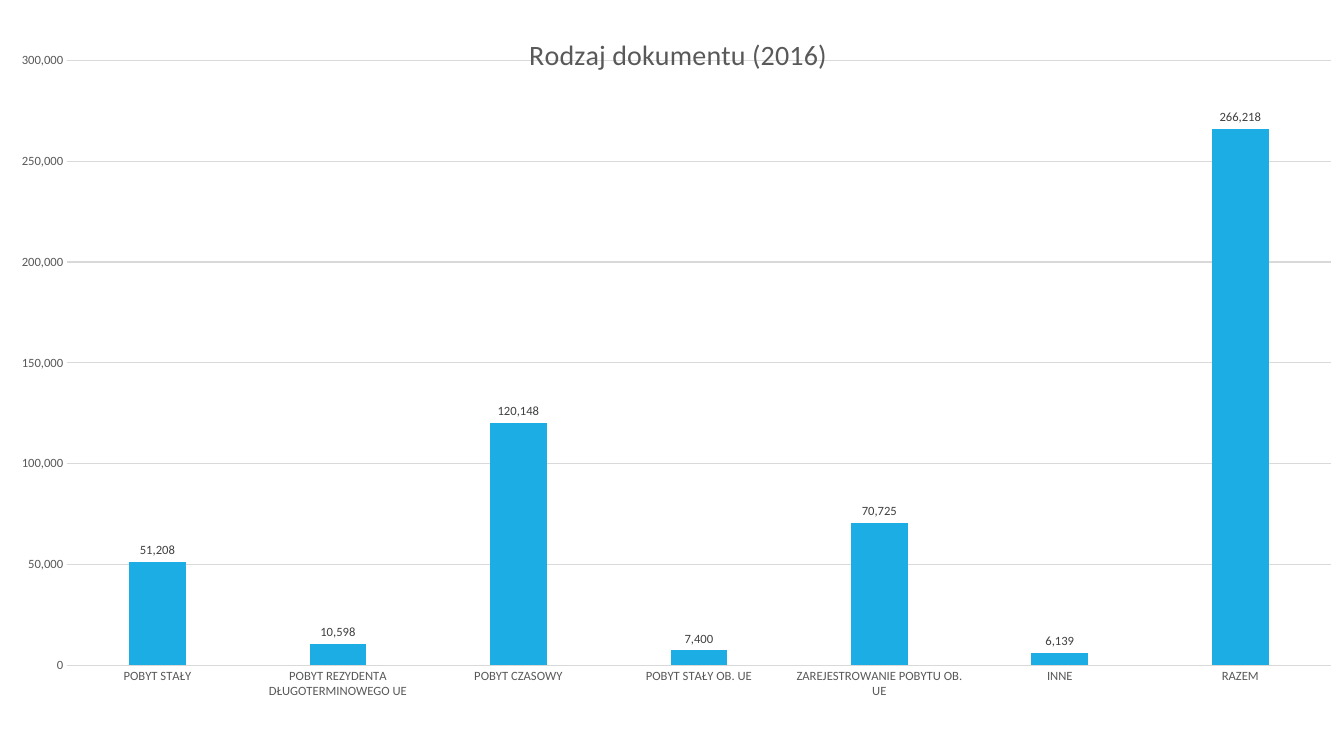
"""Build a slide with one column chart of residence documents."""
from dataclasses import dataclass

from lxml import etree
from pptx import Presentation
from pptx import util as u
from pptx.chart import data as cd
from pptx.dml import color as co
from pptx.enum import chart as ec
from pptx.oxml import ns

HUES = {"bar": "1CADE4", "text": "595959", "label": "404040", "grid": "D9D9D9"}
FACE = "Calibri"
FORM = "#,##0"
WIDE, HIGH = 13.33, 7.5


@dataclass
class Group:
    """A document type and its count."""
    name: str
    count: int


@dataclass
class Place:
    """A chart part's place as shares of the chart size."""
    x: float
    y: float
    w: float = 0
    h: float = 0


GROUPS = [
    Group("POBYT STAŁY", 51208),
    Group("POBYT REZYDENTA DŁUGOTERMINOWEGO UE", 10598),
    Group("POBYT CZASOWY", 120148),
    Group("POBYT STAŁY OB. UE", 7400),
    Group("ZAREJESTROWANIE POBYTU OB. UE", 70725),
    Group("INNE", 6139),
    Group("RAZEM", 266218),
]


def hue(key: str) -> co.RGBColor:
    """Return a named colour."""
    return co.RGBColor.from_string(HUES[key])


def style(font, size: float, key: str) -> None:
    """Set the face, size and colour of a font."""
    font.name = FACE
    font.size = u.Pt(size)
    font.bold = False
    font.color.rgb = hue(key)


def rule(line) -> None:
    """Draw a thin grey line."""
    line.color.rgb = hue("grid")
    line.width = u.Pt(0.75)


def put(part, spot: int, place: Place) -> None:
    """Give a chart part a fixed layout as its child at the given spot."""
    for old in part.findall(ns.qn("c:layout")):
        part.remove(old)
    frame = etree.Element(ns.qn("c:layout"))
    part.insert(spot, frame)
    hand = etree.SubElement(frame, ns.qn("c:manualLayout"))
    marks = {"xMode": "edge", "yMode": "edge", "x": place.x, "y": place.y}
    if place.w:
        marks = {"layoutTarget": "inner", **marks, "w": place.w, "h": place.h}
    for tag, val in marks.items():
        etree.SubElement(hand, ns.qn(f"c:{tag}")).set("val", str(val))


def head(chart) -> None:
    """Write the chart title over the plot."""
    chart.has_title = True
    title = chart.chart_title
    run = title.text_frame.paragraphs[0].add_run()
    run.text = "Rodzaj dokumentu (2016)"
    style(run.font, 20, "text")
    title.include_in_layout = True
    put(chart._chartSpace.xpath("c:chart/c:title")[0], 1, Place(0.39, 0.04))


def axes(chart) -> None:
    """Format both axes and the grid."""
    for axis in (chart.category_axis, chart.value_axis):
        axis.major_tick_mark = axis.minor_tick_mark = ec.XL_TICK_MARK.NONE
        style(axis.tick_labels.font, 9, "text")
    rule(chart.category_axis.format.line)
    side = chart.value_axis
    side.minimum_scale, side.maximum_scale, side.major_unit = 0, 300000, 50000
    side.format.line.fill.background()
    side.has_major_gridlines = True
    rule(side.major_gridlines.format.line)
    side.tick_labels.number_format = FORM
    side.tick_labels.number_format_is_linked = False


def bars(chart) -> None:
    """Format the columns and their labels."""
    plot = chart.plots[0]
    plot.gap_width, plot.overlap = 219, -27
    plot.vary_by_categories = False
    row = plot.series[0]
    row.format.fill.solid()
    row.format.fill.fore_color.rgb = hue("bar")
    tags = row.data_labels
    tags.show_value = True
    tags.position = ec.XL_LABEL_POSITION.OUTSIDE_END
    tags.number_format = FORM
    tags.number_format_is_linked = False
    style(tags.font, 9, "label")


def main() -> None:
    """Build and save the deck."""
    deck = Presentation()
    deck.slide_width, deck.slide_height = u.Inches(WIDE), u.Inches(HIGH)
    slide = deck.slides.add_slide(deck.slide_layouts[6])
    data = cd.CategoryChartData(number_format=FORM)
    data.categories = [group.name for group in GROUPS]
    data.add_series("Series 1", [group.count for group in GROUPS])
    chart = slide.shapes.add_chart(
        ec.XL_CHART_TYPE.COLUMN_CLUSTERED, 0, 0,
        u.Inches(WIDE), u.Inches(HIGH), data).chart
    chart.has_legend = False
    style(chart.font, 10, "text")
    head(chart)
    axes(chart)
    bars(chart)
    area = chart._chartSpace.xpath("c:chart/c:plotArea")[0]
    put(area, 0, Place(0.05, 0.08, 0.94, 0.8))
    deck.save("out.pptx")


if __name__ == "__main__":
    main()
